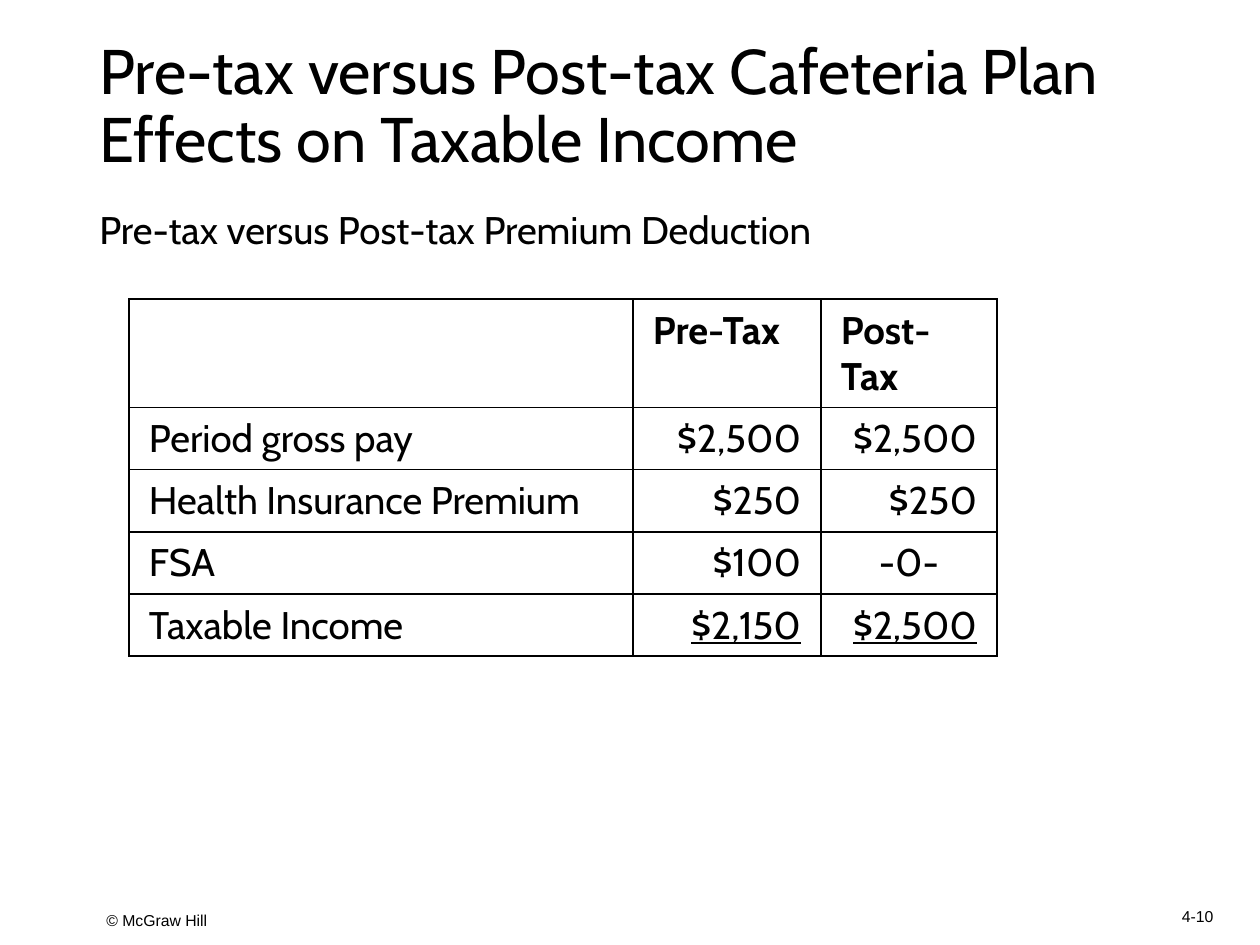
from dataclasses import dataclass

from lxml import etree
from pptx import Presentation
from pptx import util as u
from pptx.dml.color import RGBColor
from pptx.enum import text
from pptx.oxml.ns import qn

EMU_PER_PX = 914400 / 126


@dataclass(frozen=True)
class Theme:
    ink: str = "000000"
    paper: str = "FFFFFF"
    display: str = "Cabin"
    small: str = "Arial"
    title_size: int = 36
    body_size: int = 22
    footer_size: int = 9
    rule_width: int = 1


THEME = Theme()
LEFT, CENTER, RIGHT = (text.PP_ALIGN.LEFT, text.PP_ALIGN.CENTER, text.PP_ALIGN.RIGHT)
TOP, MIDDLE = text.MSO_ANCHOR.TOP, text.MSO_ANCHOR.MIDDLE


def px(length):
    return u.Emu(round(length * EMU_PER_PX))


def apply(target, values):
    for attribute, value in values.items():
        setattr(target, attribute, value)


def write(paragraph, words, size, face=THEME.display, align=LEFT, **extra):
    paragraph.alignment = align
    run = paragraph.add_run()
    run.text = words
    apply(run.font, {"name": face, "size": u.Pt(size), **extra})
    run.font.color.rgb = RGBColor.from_string(THEME.ink)


def add_label(slide, box, words, size, anchor=TOP, spacing=1.0, **style):
    frame = slide.shapes.add_textbox(*map(px, box)).text_frame
    apply(frame, {"word_wrap": True, "vertical_anchor": anchor})
    paragraph = frame.paragraphs[0]
    paragraph.line_spacing = spacing
    write(paragraph, words, size, **style)


def add_heading(slide, box):
    left, top, width, height = box
    add_label(slide, (left, top, width, 116),
              "Pre-tax versus Post-tax Cafeteria Plan Effects on Taxable Income",
              THEME.title_size, anchor=MIDDLE, spacing=0.9)
    add_label(slide, (left, top + 150, 771, height - 150),
              "Pre-tax versus Post-tax Premium Deduction", THEME.body_size)


def rule_cell(cell):
    properties = cell._tc.get_or_add_tcPr()
    for position, side in enumerate(("a:lnL", "a:lnR", "a:lnT", "a:lnB")):
        line = etree.Element(qn(side), w=str(u.Pt(THEME.rule_width)))
        fill = etree.SubElement(line, qn("a:solidFill"))
        etree.SubElement(fill, qn("a:srgbClr"), val=THEME.ink)
        properties.insert(position, line)


def add_income_table(slide, box):
    income_rows = [
        ("", "Pre-Tax", "Post-Tax"),
        ("Period gross pay", "$2,500", "$2,500"),
        ("Health Insurance Premium", "$250", "$250"),
        ("FSA", "$100", "-0-"),
        ("Taxable Income", "$2,150", "$2,500"),
    ]
    column_widths = (504, 188, 176)
    table = slide.shapes.add_table(
        len(income_rows), len(column_widths), *map(px, box)).table
    apply(table, {"first_row": False, "horz_banding": False})
    for column, width in zip(table.columns, column_widths):
        column.width = px(width)
    margins = {"margin_left": px(20), "margin_right": px(20),
               "margin_top": px(8), "margin_bottom": px(8)}
    last = len(income_rows) - 1
    for r, entries in enumerate(income_rows):
        table.rows[r].height = px(box[3] / len(income_rows))
        for c, entry in enumerate(entries):
            cell = table.cell(r, c)
            apply(cell, margins)
            cell.fill.solid()
            cell.fill.fore_color.rgb = RGBColor.from_string(THEME.paper)
            rule_cell(cell)
            if entry:
                amount = r > 0 and c > 0
                align = CENTER if entry == "-0-" else RIGHT if amount else LEFT
                write(cell.text_frame.paragraphs[0], entry, THEME.body_size,
                      align=align, bold=r == 0, underline=amount and r == last)


def add_footer(slide, box):
    left, top, width, height = box
    number_width = 105
    add_label(slide, (left, top + 8, 1021, height - 8), "© McGraw Hill",
              THEME.footer_size, anchor=MIDDLE, face=THEME.small)
    add_label(slide, (left + width - number_width, top, number_width, height), "4-10",
              THEME.footer_size, anchor=MIDDLE, face=THEME.small, align=CENTER)


def main():
    deck = Presentation()
    apply(deck, {"slide_width": px(1260), "slide_height": px(945)})
    slide = deck.slides.add_slide(deck.slide_layouts[6])
    add_heading(slide, (87, 50, 1086, 213))
    add_income_table(slide, (129, 299, 868, 310))
    add_footer(slide, (94, 892, 1156, 48))
    deck.save("out.pptx")


if __name__ == "__main__":
    main()
